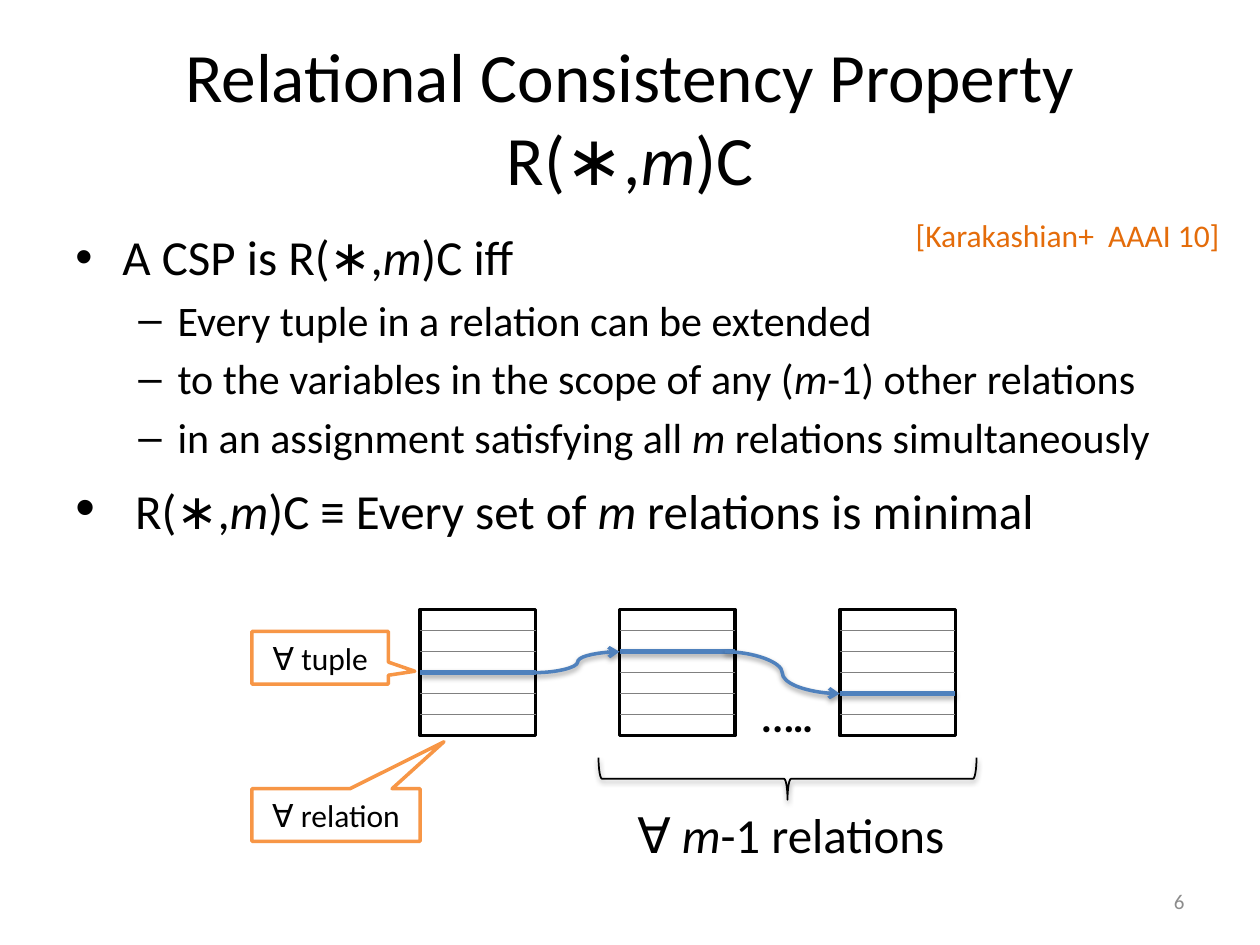
"""Build the slide on the relational consistency property R(∗,m)C."""
from dataclasses import dataclass

from lxml.etree import SubElement as Sub
from pptx import Presentation
from pptx.dml.color import RGBColor as Rgb
from pptx.enum.shapes import MSO_CONNECTOR as Link, MSO_SHAPE as Kind
from pptx.enum.text import MSO_ANCHOR as Anchor, PP_ALIGN as Align
from pptx.oxml.ns import qn
from pptx.util import Cm, Pt


@dataclass
class Theme:
    font: str = "Calibri"
    black: Rgb = Rgb(0, 0, 0)
    white: Rgb = Rgb(255, 255, 255)
    grey: Rgb = Rgb(0x80, 0x80, 0x80)
    pale: Rgb = Rgb(0x8C, 0x8C, 0x8C)
    blue: Rgb = Rgb(0x4F, 0x81, 0xBD)
    amber: Rgb = Rgb(0xF7, 0x96, 0x46)
    rust: Rgb = Rgb(0xE4, 0x6C, 0x0A)
    title: float = 39.6
    large: int = 28
    body: int = 24
    small: int = 18
    tiny: int = 12


def write(para, text, size, color=Theme.black, bold=False):
    """Add runs to a paragraph; parts between underscores are italic."""
    for i, part in enumerate(text.split("_")):
        run = para.add_run()
        run.text = part
        font = run.font
        font.name, font.size, font.bold = Theme.font, Pt(size), bold
        font.italic = i % 2 == 1
        font.color.rgb = color


def stroke(shape, color, width, shade=0):
    """Set the line, and a soft shadow of the given strength in percent."""
    shape.line.color.rgb = color
    shape.line.width = Pt(width)
    props = shape.element.spPr
    for old in props.findall(qn("a:effectLst")):
        props.remove(old)
    effect = Sub(props, qn("a:effectLst"))
    if shade:
        drop = Sub(effect, qn("a:outerShdw"), blurRad="40000", dist="20000",
                   dir="5400000", rotWithShape="0")
        tint = Sub(drop, qn("a:srgbClr"), val=str(Theme.black))
        Sub(tint, qn("a:alpha"), val=str(shade * 1000))


deck = Presentation()
deck.slide_width, deck.slide_height = Cm(25.4), Cm(19.05)
slide = deck.slides.add_slide(deck.slide_layouts[5])
shapes = slide.shapes

title = shapes.title
title.left, title.top, title.width, title.height = Cm(1.27), Cm(0.76), Cm(22.86), Cm(3.18)
frame = title.text_frame
frame.vertical_anchor = Anchor.MIDDLE
frame.paragraphs[0].alignment = Align.CENTER
write(frame.paragraphs[0], "Relational Consistency Property R(∗,_m_)C", Theme.title)

frame = shapes.add_textbox(Cm(1.27), Cm(4.45), Cm(22.86), Cm(12.57)).text_frame
frame.word_wrap = True
points = [
    (0, "A CSP is R(∗,_m_)C iff"),
    (1, "Every tuple in a relation can be extended"),
    (1, "to the variables in the scope of any (_m_-1) other relations"),
    (1, "in an assignment satisfying all _m_ relations simultaneously"),
    (0, "R(∗,_m_)C ≡ Every set of _m_ relations is minimal"),
]
levels = [("•", 0.95, 0.95, Theme.large), ("–", 2.06, 0.79, Theme.body)]
for i, (level, text) in enumerate(points):
    para = frame.add_paragraph() if i else frame.paragraphs[0]
    mark, left, hang, size = levels[level]
    para.level = level
    props = para._p.get_or_add_pPr()
    props.set("marL", str(Cm(left)))
    props.set("indent", str(-Cm(hang)))
    space = Sub(Sub(props, qn("a:spcBef")), qn("a:spcPct"))
    space.set("val", "20000")
    Sub(props, qn("a:buFont"), typeface="Arial")
    Sub(props, qn("a:buChar"), char=mark)
    if i == len(points) - 1:
        write(para, " ", 32)
    write(para, text, size)

top, wide, high, rows = 12.29, 2.33, 2.54, 6
step = high / rows
grids = [(8.47, 3), (12.49, 2), (16.93, 4)]
for left, pick in grids:
    box = shapes.add_shape(Kind.RECTANGLE, Cm(left), Cm(top), Cm(wide), Cm(high))
    box.fill.solid()
    box.fill.fore_color.rgb = Theme.white
    stroke(box, Theme.black, 2)
    for row in range(1, rows):
        y = Cm(top + row * step)
        rule = shapes.add_connector(Link.STRAIGHT, Cm(left), y, Cm(left + wide), y)
        if row * 2 == rows:
            rule.begin_connect(box, 1)
            rule.end_connect(box, 3)
        if row == pick:
            stroke(rule, Theme.blue, 3, 35)
        else:
            stroke(rule, Theme.grey, 0.75)

for (left, row), (right, goal), back in zip(grids, grids[1:], (0, 0.21)):
    curve = shapes.add_connector(Link.CURVE, Cm(left + wide - back), Cm(top + row * step),
                                 Cm(right), Cm(top + goal * step))
    stroke(curve, Theme.blue, 2, 38)
    Sub(curve.element.spPr.find(qn("a:ln")), qn("a:tailEnd"), type="arrow")

brace = shapes.add_shape(Kind.RIGHT_BRACE, Cm(15.45), Cm(11.89), Cm(0.85), Cm(7.62))
brace.rotation = 90
brace.adjustments[0] = 0.083
brace.fill.background()
stroke(brace, Theme.black, 1, 38)

calls = [
    ("∀ tuple", 12.73, 2.75, 0.694, 0.257),
    ("∀ relation", 15.9, 3.39, 0.642, -1.393),
]
for text, y, width, tip, drop in calls:
    call = shapes.add_shape(Kind.RECTANGULAR_CALLOUT, Cm(5.08), Cm(y), Cm(width), Cm(1.06))
    call.adjustments[0], call.adjustments[1] = tip, drop
    call.fill.solid()
    call.fill.fore_color.rgb = Theme.white
    stroke(call, Theme.amber, 2)
    frame = call.text_frame
    frame.margin_left = frame.margin_right = frame.margin_top = frame.margin_bottom = 0
    frame.vertical_anchor = Anchor.MIDDLE
    frame.paragraphs[0].alignment = Align.CENTER
    write(frame.paragraphs[0], text, Theme.small)

notes = [
    ("..…", 15.09, 13.79, 1.57, 1.27, Theme.body, Theme.black, True, Align.LEFT),
    ("∀ _m_-1 relations", 12.6, 16.1, 7.49, 1.45, Theme.large, Theme.black, False, Align.LEFT),
    ("6", 18.21, 17.65, 5.92, 1.02, Theme.tiny, Theme.pale, False, Align.RIGHT),
    ("[Karakashian+  AAAI 10]", 18.21, 4.24, 6.73, 1.02, Theme.small, Theme.rust, False, Align.LEFT),
]
for text, x, y, width, height, size, color, bold, align in notes:
    frame = shapes.add_textbox(Cm(x), Cm(y), Cm(width), Cm(height)).text_frame
    frame.word_wrap = align == Align.RIGHT
    frame.vertical_anchor = Anchor.MIDDLE if align == Align.RIGHT else Anchor.TOP
    frame.paragraphs[0].alignment = align
    write(frame.paragraphs[0], text, size, color, bold)

deck.save("out.pptx")
